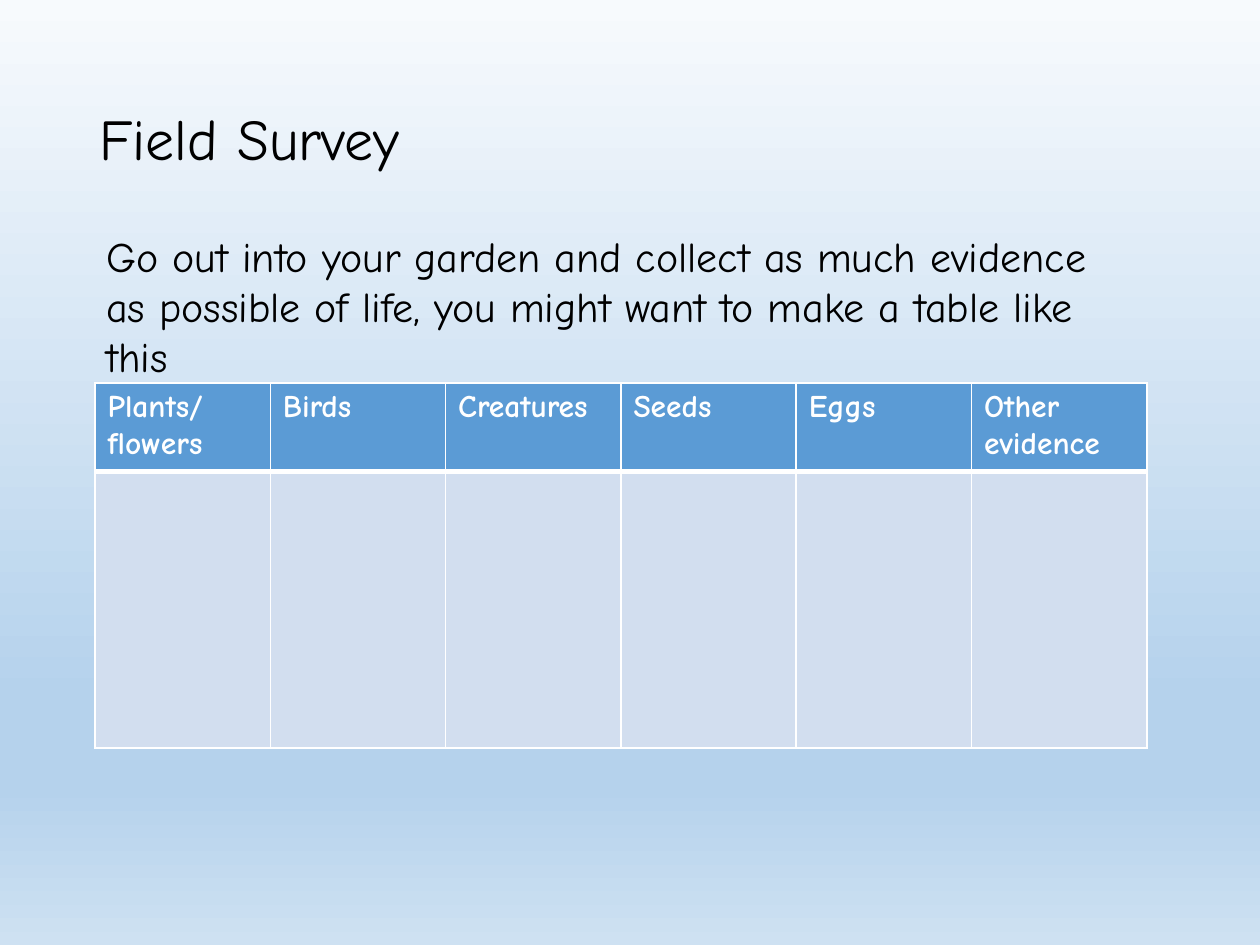
from lxml import etree
from pptx import Presentation
from pptx.dml.color import RGBColor
from pptx.enum.text import MSO_ANCHOR
from pptx.oxml.ns import qn
from pptx.util import Emu, Pt

FONT = "Comic Neue"
BLACK = RGBColor(0x00, 0x00, 0x00)
WHITE = RGBColor(0xFF, 0xFF, 0xFF)
HEADER_BLUE = RGBColor(0x5B, 0x9B, 0xD5)
BODY_BLUE = RGBColor(0xD2, 0xDE, 0xEF)
SKY_TOP = RGBColor(0xF7, 0xFA, 0xFD)
SKY_MID = RGBColor(0xB5, 0xD2, 0xEC)
SKY_LOW = RGBColor(0xCE, 0xE1, 0xF2)
SKY_STOPS = [(0, SKY_TOP), (74, SKY_MID), (83, SKY_MID), (100, SKY_LOW)]

HEADINGS = ["Plants/\nflowers", "Birds", "Creatures", "Seeds", "Eggs",
            "Other evidence"]
ROW_HEIGHTS = [88, 277]


def px(n):
    return Emu(round(n * 914400 / 126))


def add_color(parent, color):
    etree.SubElement(parent, qn("a:srgbClr"), val=str(color))


def style_font(p, size, color, bold=False):
    p.font.name = FONT
    p.font.size = Pt(size)
    p.font.color.rgb = color
    p.font.bold = bold


def set_background(s, stops):
    fill = s.background.fill
    fill.gradient()
    fill.gradient_angle = 270
    stop_list = s.element.find(".//" + qn("a:gsLst"))
    for stop in list(stop_list):
        stop_list.remove(stop)
    for percent, color in stops:
        add_color(etree.SubElement(stop_list, qn("a:gs"),
                                   pos=str(percent * 1000)), color)


def add_text(s, text, left, top, width, height, size,
             anchor=MSO_ANCHOR.TOP, spacing=None):
    tf = s.shapes.add_textbox(px(left), px(top), px(width), px(height)).text_frame
    tf.word_wrap = True
    tf.vertical_anchor = anchor
    p = tf.paragraphs[0]
    p.text = text
    p.line_spacing = spacing
    style_font(p, size, BLACK)


def set_borders(cell, top, bottom):
    tc_pr = cell._tc.get_or_add_tcPr()
    for side, width in (("L", 1), ("R", 1), ("T", top), ("B", bottom)):
        ln = etree.SubElement(tc_pr, qn(f"a:ln{side}"), w=str(Pt(width)))
        add_color(etree.SubElement(ln, qn("a:solidFill")), WHITE)


def fill_cell(cell, color):
    cell.fill.solid()
    cell.fill.fore_color.rgb = color


def add_survey_table(s, left, top, width):
    table = s.shapes.add_table(len(ROW_HEIGHTS), len(HEADINGS), px(left), px(top),
                               px(width), px(sum(ROW_HEIGHTS))).table
    for row, height in zip(table.rows, ROW_HEIGHTS):
        row.height = px(height)
    for col, heading in enumerate(HEADINGS):
        head, body = table.cell(0, col), table.cell(1, col)
        # The heavy rule sits between the headings and the empty row
        set_borders(head, 1, 3)
        set_borders(body, 3, 1)
        fill_cell(head, HEADER_BLUE)
        fill_cell(body, BODY_BLUE)
        head.text = heading
        for p in head.text_frame.paragraphs:
            style_font(p, 18, WHITE, bold=True)


def main():
    prs = Presentation()
    prs.slide_width, prs.slide_height = px(1260), px(945)
    s = prs.slides.add_slide(prs.slide_layouts[6])
    set_background(s, SKY_STOPS)

    # Title and task
    add_text(s, "Field Survey", 87, 50, 1086, 183, 33, MSO_ANCHOR.MIDDLE, 0.9)
    add_text(s, "Go out into your garden and collect as much evidence as possible "
                "of life, you might want to make a table like this",
             94, 224, 1032, 165, 24)

    # Recording table
    add_survey_table(s, 95, 383, 1052)
    prs.save("out.pptx")


if __name__ == "__main__":
    main()
